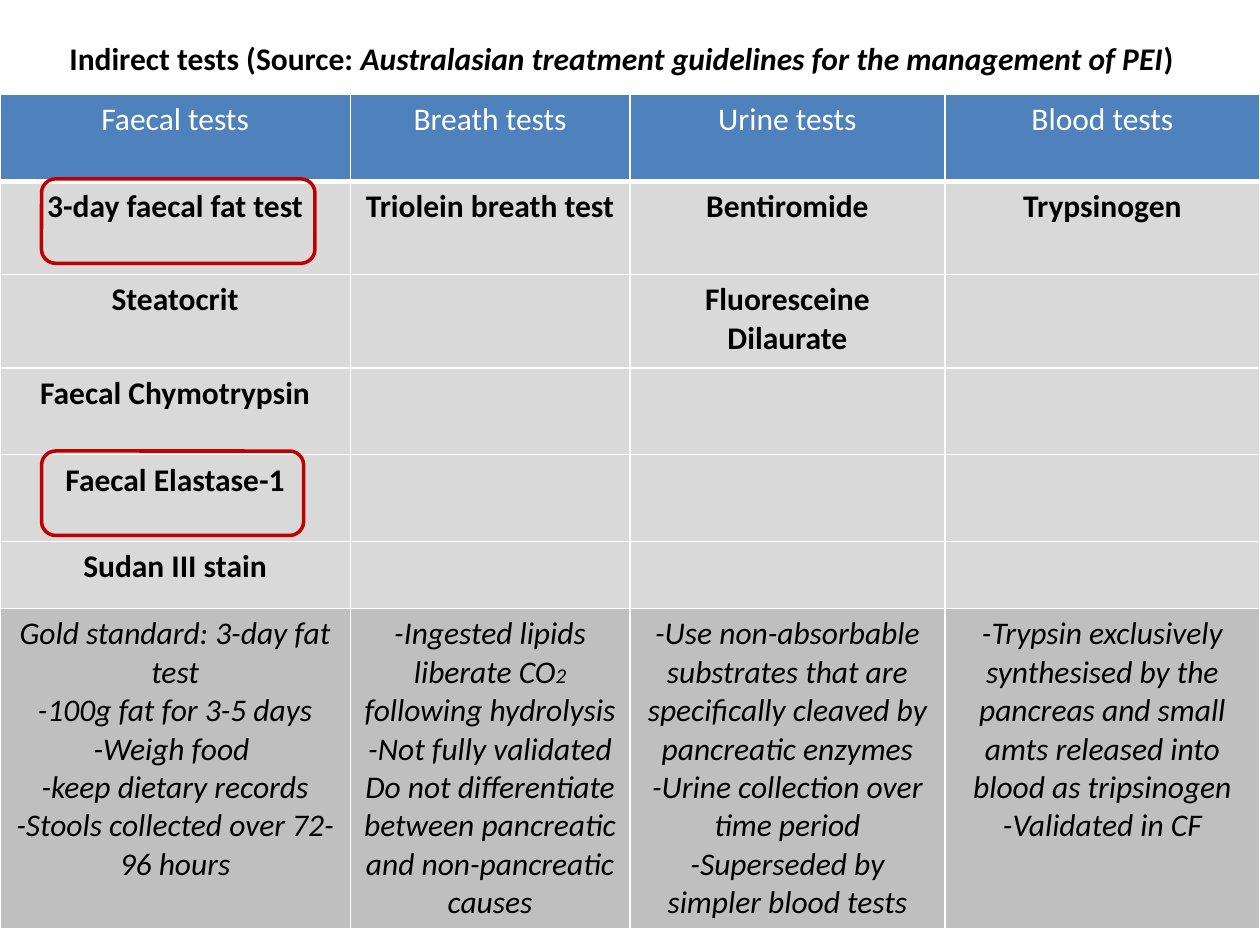
from lxml.etree import SubElement
from pptx import Presentation
from pptx.dml.color import RGBColor
from pptx.enum.shapes import MSO_SHAPE
from pptx.enum.text import MSO_ANCHOR, PP_ALIGN
from pptx.oxml.ns import qn
from pptx.util import Inches, Pt

COLORS = {
    "text": "000000",
    "white": "FFFFFF",
    "header": "4F81BD",
    "test": "D9D9D9",
    "notes": "BFBFBF",
    "highlight": "C00000",
}
FONT = "Calibri"
COLUMN_WIDTHS = [2.78, 2.22, 2.5, 2.5]
ROW_HEIGHTS = [0.69, 0.74, 0.74, 0.69, 0.69, 0.53, 2.4]
HEADERS = ["Faecal tests", "Breath tests", "Urine tests", "Blood tests"]
TESTS = [
    ["3-day faecal fat test", "Triolein breath test", "Bentiromide", "Trypsinogen"],
    ["Steatocrit", "", "Fluoresceine Dilaurate", ""],
    ["Faecal Chymotrypsin", "", "", ""],
    ["Faecal Elastase-1", "", "", ""],
    ["Sudan III stain", "", "", ""],
]
NOTES = [
    [
        ["Gold standard: 3-day fat test"],
        ["-100g fat for 3-5 days"],
        ["-Weigh food "],
        ["-keep dietary records"],
        ["-Stools collected over 72-96 hours"],
    ],
    [
        ["-Ingested lipids liberate CO", ("2", 12), " following hydrolysis"],
        ["-Not fully validated"],
        ["Do not differentiate between pancreatic and non-pancreatic causes"],
    ],
    [
        ["-Use non-absorbable substrates that are specifically cleaved by pancreatic enzymes"],
        ["-Urine collection over time period"],
        ["-Superseded by simpler blood tests"],
    ],
    [
        ["-Trypsin exclusively synthesised by the pancreas and small amts released into blood as tripsinogen"],
        ["-Validated in CF"],
    ],
]


def color(name):
    return RGBColor.from_string(COLORS[name])


def add_span(para, text, size=18, color_name="text", bold=False, italic=False):
    span = para.add_run()
    span.text = text
    font = span.font
    font.name, font.size = FONT, Pt(size)
    font.bold, font.italic = bold, italic
    font.color.rgb = color(color_name)


def add_title(page):
    title = page.shapes.title
    title.left, title.top = Inches(0.17), Inches(0.17)
    title.width, title.height = Inches(9.58), Inches(0.58)
    frame = title.text_frame
    frame.vertical_anchor = MSO_ANCHOR.MIDDLE
    para = frame.paragraphs[0]
    para.alignment = PP_ALIGN.CENTER
    add_span(para, "Indirect tests (Source: ", bold=True)
    add_span(para, "Australasian treatment guidelines for the management of PEI", bold=True, italic=True)
    add_span(para, ") ", bold=True)


def set_borders(cell, bottom_width):
    properties = cell._tc.get_or_add_tcPr()
    for side, width in (("L", 1), ("R", 1), ("T", 1), ("B", bottom_width)):
        line = SubElement(properties, qn(f"a:ln{side}"), w=str(Pt(width)))
        fill = SubElement(line, qn("a:solidFill"))
        SubElement(fill, qn("a:srgbClr"), val=COLORS["white"])


def fill_cell(cell, paragraphs, fill_name, bottom_width=1, **style):
    set_borders(cell, bottom_width)
    cell.fill.solid()
    cell.fill.fore_color.rgb = color(fill_name)
    frame = cell.text_frame
    for index, pieces in enumerate(paragraphs):
        para = frame.paragraphs[0] if index == 0 else frame.add_paragraph()
        para.alignment = PP_ALIGN.CENTER
        for piece in pieces:
            text, size = piece if isinstance(piece, tuple) else (piece, 18)
            add_span(para, text, size, **style)


def add_tests_table(page):
    table = page.shapes.add_table(
        len(ROW_HEIGHTS), len(COLUMN_WIDTHS), Inches(0), Inches(0.75),
        Inches(sum(COLUMN_WIDTHS)), Inches(sum(ROW_HEIGHTS)),
    ).table
    for column, width in zip(table.columns, COLUMN_WIDTHS):
        column.width = Inches(width)
    for row, height in zip(table.rows, ROW_HEIGHTS):
        row.height = Inches(height)
    for column_index, header in enumerate(HEADERS):
        fill_cell(table.cell(0, column_index), [[header]], "header", 3, color_name="white")
    for row_index, tests in enumerate(TESTS, 1):
        for column_index, test in enumerate(tests):
            paragraphs = [[test]] if test else []
            fill_cell(table.cell(row_index, column_index), paragraphs, "test", bold=True)
    for column_index, notes in enumerate(NOTES):
        fill_cell(table.cell(len(TESTS) + 1, column_index), notes, "notes", italic=True)


def add_highlight(page, top, width):
    box = page.shapes.add_shape(
        MSO_SHAPE.ROUNDED_RECTANGLE, Inches(0.33), Inches(top), Inches(width), Inches(0.67)
    )
    box.shadow.inherit = False
    box.fill.background()
    box.line.color.rgb = color("highlight")
    box.line.width = Pt(2)


def main():
    deck = Presentation()
    deck.slide_width, deck.slide_height = Inches(10), Inches(7.5)
    page = deck.slides.add_slide(deck.slide_layouts[5])
    add_title(page)
    add_tests_table(page)
    add_highlight(page, 1.42, 2.17)
    add_highlight(page, 3.58, 2.08)
    deck.save("out.pptx")


if __name__ == "__main__":
    main()
